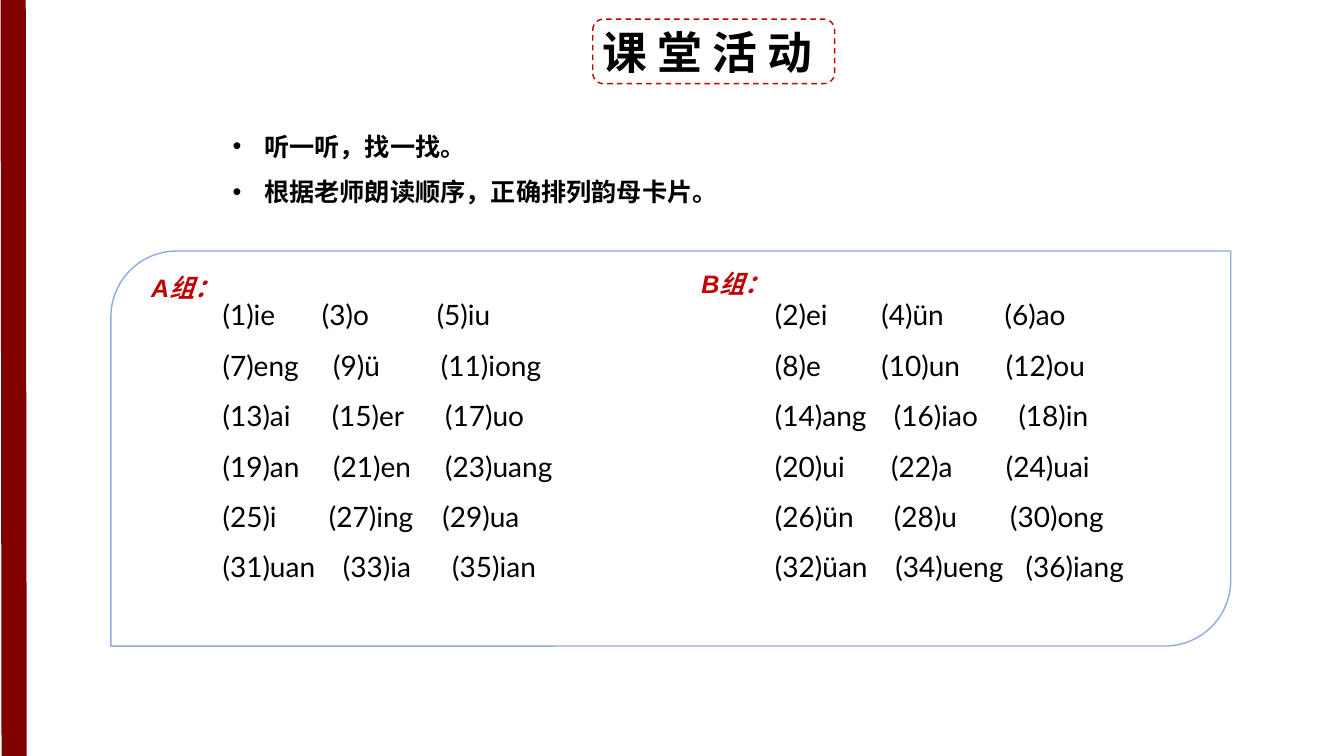
"""Build the classroom activity slide with two groups of numbered finals."""
from lxml import etree
from pptx import Presentation
from pptx import util as u
from pptx.dml.color import RGBColor
from pptx.enum import dml, shapes, text
from pptx.oxml.ns import qn

COLORS = {"ink": "000000", "red": "C00000", "bar": "800000", "panel": "8FAADC"}
CHINESE_FONT = "Noto Sans CJK SC"
TITLE = "课 堂 活 动"
TITLE_BOX = (423.4, 13.7, 172.8, 46.1)
PANEL_BOX = (79.2, 179.3, 799.9, 282.2)
TASKS = ["听一听，找一找。", "根据老师朗读顺序，正确排列韵母卡片。"]
GROUPS = [
    {
        "label": "A组：", "label_at": (100.8, 190.8), "list_at": (151.9, 197.3),
        "first": 1, "width": 290.9,
        "rows": [
            (("ie", "o", "iu"), (71, 153)),
            (("eng", "ü", "iong"), (79, 156)),
            (("ai", "er", "uo"), (78, 159)),
            (("an", "en", "uang"), (79, 159)),
            (("i", "ing", "ua"), (76, 157)),
            (("uan", "ia", "ian"), (86, 164)),
        ],
    },
    {
        "label": "B组：", "label_at": (493.9, 187.9), "list_at": (546.5, 197.3),
        "first": 2, "width": 376.6,
        "rows": [
            (("ei", "ün", "ao"), (76, 164)),
            (("e", "un", "ou"), (76, 165)),
            (("ang", "iao", "in"), (85, 174)),
            (("ui", "a", "uai"), (83, 165)),
            (("ün", "u", "ong"), (85, 168)),
            (("üan", "ueng", "iang"), (86, 179)),
        ],
    },
]


def points(values):
    return [u.Pt(value) for value in values]


def color(name):
    return RGBColor.from_string(COLORS[name])


def style(paragraph, font_name, size, ink="ink", bold=False, italic=False):
    font = paragraph.font
    font.name, font.size = font_name, u.Pt(size)
    font.bold, font.italic = bold, italic
    font.color.rgb = color(ink)
    latin = paragraph._p.pPr.find(qn("a:defRPr")).find(qn("a:latin"))
    east_asian = etree.Element(qn("a:ea"), typeface=CHINESE_FONT)
    latin.addnext(east_asian)
    for run in paragraph.runs:
        run.font.name = font_name
        run._r.rPr.find(qn("a:latin")).addnext(
            etree.Element(qn("a:ea"), typeface=CHINESE_FONT))
        run.font.size, run.font.bold, run.font.italic = u.Pt(size), bold, italic
        run.font.color.rgb = color(ink)


def add_text(slide, box, lines):
    frame = slide.shapes.add_textbox(*points(box)).text_frame
    frame.word_wrap = True
    frame.text = "\n".join(lines)
    return frame.paragraphs


def add_outline(slide, kind, box, line_color):
    shape = slide.shapes.add_shape(kind, *points(box))
    shape.shadow.inherit = False
    shape.fill.background()
    shape.line.color.rgb = color(line_color)
    shape.line.width = u.Pt(1)
    return shape


def add_title(slide):
    title = slide.shapes.title
    title.left, title.top, title.width, title.height = points(TITLE_BOX)
    frame = title.text_frame
    frame.text = TITLE
    frame.word_wrap = False
    frame.auto_size = text.MSO_AUTO_SIZE.NONE
    frame.vertical_anchor = text.MSO_ANCHOR.MIDDLE
    frame.paragraphs[0].alignment = text.PP_ALIGN.LEFT
    style(frame.paragraphs[0], CHINESE_FONT, 32, bold=True)
    border = add_outline(slide, shapes.MSO_SHAPE.ROUNDED_RECTANGLE, TITLE_BOX, "red")
    border.line.dash_style = dml.MSO_LINE.DASH


def add_side_bar(slide):
    bar = slide.shapes.add_connector(
        shapes.MSO_CONNECTOR.STRAIGHT, *points((10.1, 540, 9.4, -1.4)))
    bar.line.color.rgb = color("bar")
    bar.line.width = u.Pt(18)
    etree.SubElement(bar._element.spPr, qn("a:effectLst"))


def add_tasks(slide):
    for paragraph in add_text(slide, (159.1, 79.2, 601.9, 72.7), TASKS):
        paragraph.line_spacing = 1.5
        style(paragraph, "Arial", 18, bold=True)
        properties = paragraph._p.pPr
        properties.set("marL", str(u.Pt(22.5)))
        properties.set("indent", str(u.Pt(-22.5)))
        default_font = properties.find(qn("a:defRPr"))
        default_font.addprevious(etree.Element(qn("a:buFont"), typeface="Arial"))
        default_font.addprevious(etree.Element(qn("a:buChar"), char="•"))


def add_group(slide, group):
    label = add_text(slide, (*group["label_at"], 186.5, 26.6), [group["label"]])[0]
    style(label, "Arial", 18, "red", bold=True, italic=True)
    lines, number = [], group["first"]
    for finals, _ in group["rows"]:
        lines.append("\t".join(
            f"({number + 2 * column}){final}" for column, final in enumerate(finals)))
        number += 2 * len(finals)
    paragraphs = add_text(slide, (*group["list_at"], group["width"], 261.7), lines)
    for paragraph, (_, stops) in zip(paragraphs, group["rows"]):
        paragraph.line_spacing = 1.5
        style(paragraph, "Lato", 20)
        tabs = etree.Element(qn("a:tabLst"))
        for stop in stops:
            etree.SubElement(tabs, qn("a:tab"), pos=str(u.Pt(stop)), algn="l")
        paragraph._p.pPr.find(qn("a:defRPr")).addprevious(tabs)


def main():
    presentation = Presentation()
    presentation.slide_width, presentation.slide_height = points((960, 540))
    slide = presentation.slides.add_slide(presentation.slide_layouts[5])
    add_title(slide)
    add_side_bar(slide)
    add_tasks(slide)
    add_outline(slide, shapes.MSO_SHAPE.ROUND_2_DIAG_RECTANGLE, PANEL_BOX, "panel")
    for group in GROUPS:
        add_group(slide, group)
    presentation.save("out.pptx")


if __name__ == "__main__":
    main()
